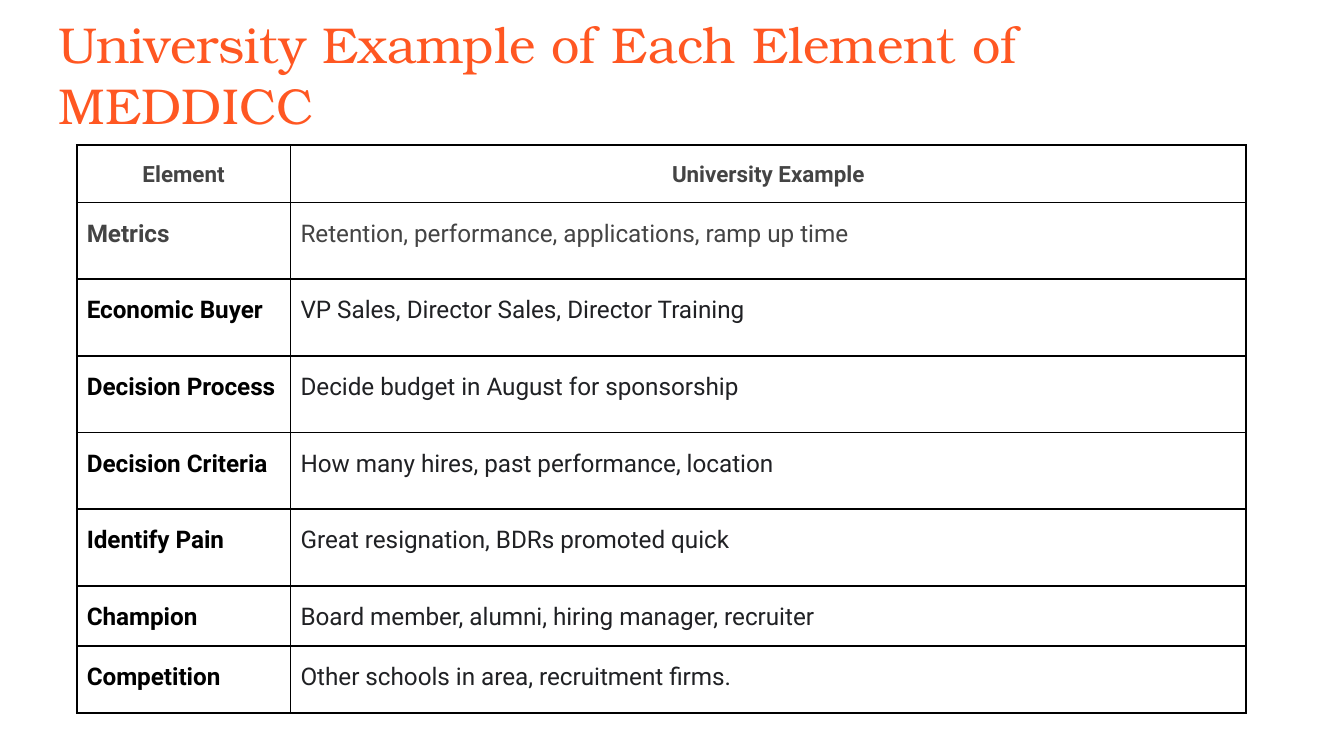
import dataclasses

import lxml.etree
import pptx
import pptx.dml.color
import pptx.enum.text
import pptx.oxml.ns
import pptx.util

Cm, Pt = pptx.util.Cm, pptx.util.Pt
ALIGN = pptx.enum.text.PP_ALIGN
ANCHOR = pptx.enum.text.MSO_ANCHOR
GREY, BLACK, DARK, ORANGE = "444444", "000000", "202124", "FF5722"


@dataclasses.dataclass
class Row:
    name: str
    sample: str
    height: float = 1.45
    ink: str = BLACK
    tone: str = DARK
    head: bool = False


ROWS = [
    Row("Element", "University Example", 1.07, GREY, GREY, True),
    Row("Metrics", "Retention, performance, applications, ramp up time",
        ink=GREY, tone=GREY),
    Row("Economic Buyer", "VP Sales, Director Sales, Director Training"),
    Row("Decision Process", "Decide budget in August for sponsorship"),
    Row("Decision Criteria", "How many hires, past performance, location"),
    Row("Identify Pain", "Great resignation, BDRs promoted quick"),
    Row("Champion", "Board member, alumni, hiring manager, recruiter", 1.04),
    Row("Competition", "Other schools in area, recruitment firms.", 1.27),
]
WIDTHS = [4.04, 18.06]


def color(code: str) -> pptx.dml.color.RGBColor:
    return pptx.dml.color.RGBColor.from_string(code)


def write(frame, text: str, *, size: float, ink: str, font: str = "Roboto",
          bold: bool = False, align=ALIGN.LEFT, space: float = 1.0) -> None:
    frame.word_wrap = True
    para = frame.paragraphs[0]
    para.alignment = align
    para.line_spacing = space
    run = para.add_run()
    run.text = text
    run.font.name = font
    run.font.size = Pt(size)
    run.font.bold = bold
    run.font.color.rgb = color(ink)


def pad(box, side: float, end: float) -> None:
    """Set the inner margins of a cell or a text frame."""
    box.margin_left = box.margin_right = Cm(side)
    box.margin_top = box.margin_bottom = Cm(end)


def border(cell) -> None:
    """Rule all four sides; the lines must precede the cell's fill."""
    props = cell._tc.get_or_add_tcPr()
    qn = pptx.oxml.ns.qn
    for spot, side in enumerate("LRTB"):
        line = lxml.etree.Element(qn(f"a:ln{side}"), w=str(Pt(1)))
        fill = lxml.etree.SubElement(line, qn("a:solidFill"))
        lxml.etree.SubElement(fill, qn("a:srgbClr"), val=BLACK)
        props.insert(spot, line)


def fill_cell(cell, text: str, ink: str, bold: bool, head: bool) -> None:
    cell.fill.background()
    cell.vertical_anchor = ANCHOR.TOP
    pad(cell, 0.19, 0.25)
    border(cell)
    write(cell.text_frame, text, size=12 if head else 13, ink=ink, bold=bold,
          align=ALIGN.CENTER if head else ALIGN.LEFT, space=1.15)


def add_title(slide, text: str) -> None:
    box = slide.shapes.add_textbox(Cm(0.86), Cm(0), Cm(23.67), Cm(1.6))
    frame = box.text_frame
    frame.vertical_anchor = ANCHOR.TOP
    pad(frame, 0.25, 0.25)
    write(frame, text, size=27, ink=ORANGE, font="TeX Gyre Bonum")


def add_grid(slide, rows: list[Row]) -> None:
    high = sum(row.height for row in rows)
    table = slide.shapes.add_table(len(rows), len(WIDTHS), Cm(1.45), Cm(2.74),
                                   Cm(sum(WIDTHS)), Cm(high)).table
    table.first_row = table.horz_banding = False
    for col, width in zip(table.columns, WIDTHS):
        col.width = Cm(width)
    for line, row in zip(table.rows, rows):
        line.height = Cm(row.height)
        name, sample = line.cells
        fill_cell(name, row.name, row.ink, True, row.head)
        fill_cell(sample, row.sample, row.tone, row.head, row.head)


def main() -> None:
    deck = pptx.Presentation()
    deck.slide_width, deck.slide_height = Cm(25.4), Cm(14.29)
    slide = deck.slides.add_slide(deck.slide_layouts[6])
    add_title(slide, "University Example of Each Element of MEDDICC")
    add_grid(slide, ROWS)
    deck.save("out.pptx")


if __name__ == "__main__":
    main()
